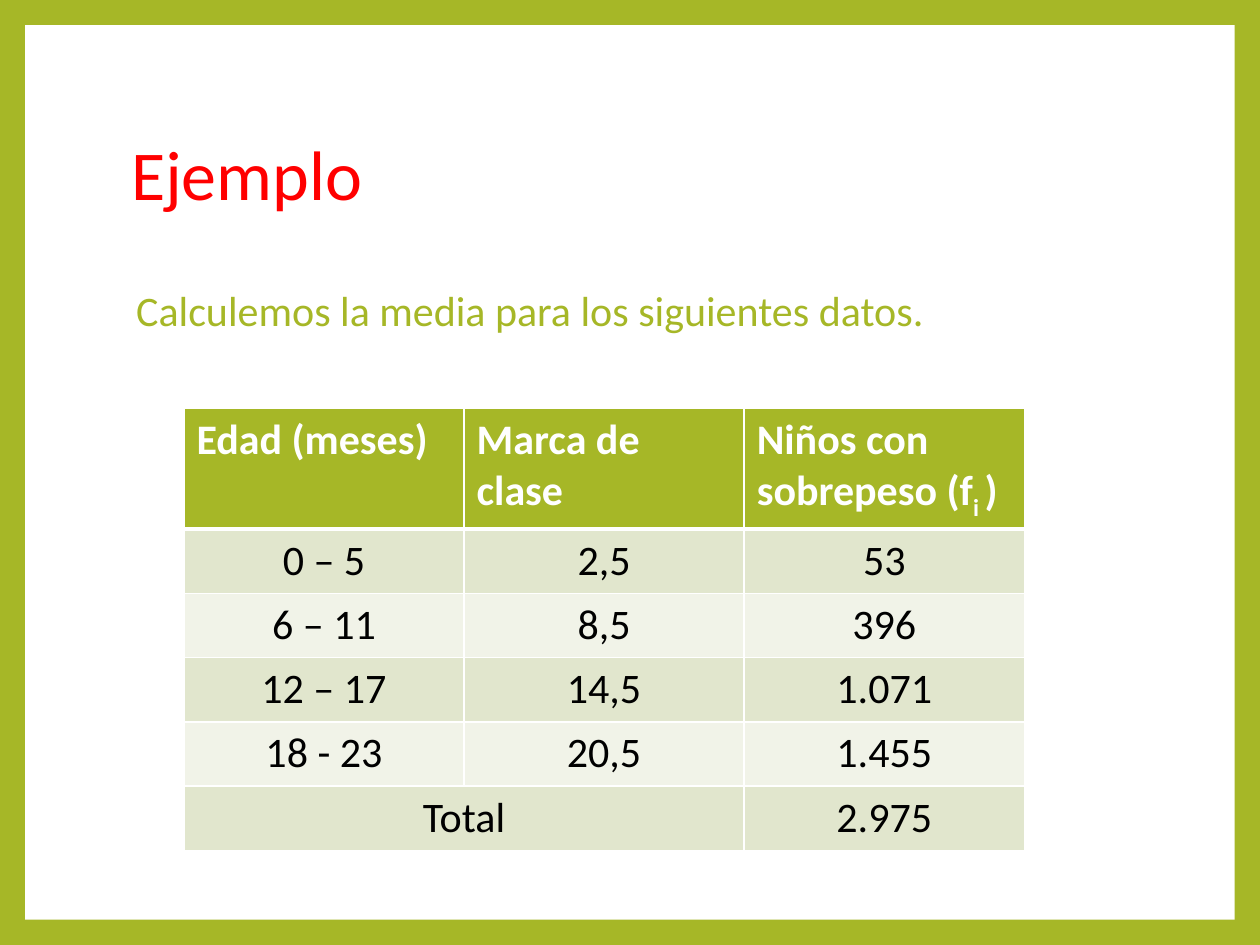
from lxml.etree import SubElement
from pptx import Presentation
from pptx.dml.color import RGBColor
from pptx.enum.shapes import MSO_SHAPE
from pptx.enum.text import MSO_ANCHOR, PP_ALIGN
from pptx.oxml.ns import qn
from pptx.util import Inches, Pt

COLORS = {name: RGBColor.from_string(value) for name, value in {
    "green": "A6B727", "white": "FFFFFF", "red": "FF0000", "black": "000000",
    "band_dark": "E1E6CD", "band_light": "F1F3E8"}.items()}


def add_run(paragraph, text, size, color, bold=False):
    run = paragraph.add_run()
    run.text = text
    run.font.name = "Calibri"
    run.font.size = Pt(size)
    run.font.bold = bold
    run.font.color.rgb = COLORS[color]
    return run


def add_borders(cell, bottom, top):
    """Draw white borders around a cell; bottom and top are widths in points."""
    properties = cell._tc.get_or_add_tcPr()
    for side, width in (("L", 1), ("R", 1), ("T", top), ("B", bottom)):
        line = SubElement(properties, qn(f"a:ln{side}"), w=str(Pt(width)))
        fill = SubElement(line, qn("a:solidFill"))
        SubElement(fill, qn("a:srgbClr"), val=str(COLORS["white"]))


prs = Presentation()
prs.slide_width, prs.slide_height = Inches(10), Inches(7.5)
slide = prs.slides.add_slide(prs.slide_layouts[1])
slide.background.fill.solid()
slide.background.fill.fore_color.rgb = COLORS["green"]
title, body = slide.placeholders

# White page inside the green frame, behind the placeholders
page = slide.shapes.add_shape(MSO_SHAPE.RECTANGLE, Inches(0.2), Inches(0.2),
                              Inches(9.6), Inches(7.1))
page.shadow.inherit = False
page.fill.solid()
page.fill.fore_color.rgb = COLORS["white"]
page.line.fill.background()
title.element.addprevious(page.element)

# Title and introduction
title.left, title.top = Inches(0.94), Inches(0.67)
title.width, title.height = Inches(8.1), Inches(1.48)
title.text_frame.vertical_anchor = MSO_ANCHOR.MIDDLE
heading = title.text_frame.paragraphs[0]
heading.alignment = PP_ALIGN.LEFT
heading.line_spacing = 0.9
add_run(heading, "Ejemplo", 40, "red")

body.left, body.top = Inches(0.94), Inches(2.25)
body.width, body.height = Inches(8.1), Inches(4.42)
intro = body.text_frame.paragraphs[0]
intro.line_spacing = 0.9
intro.space_before = Pt(10)
intro_properties = intro._p.get_or_add_pPr()
intro_properties.set("marL", str(Inches(0.04)))
intro_properties.set("indent", "0")
SubElement(intro_properties, qn("a:buNone"))
add_run(intro, "Calculemos la media para los siguientes datos.", 24, "green")

# Frequency table
HEADERS = [["Edad (meses)"], ["Marca de clase"], ["Niños con sobrepeso (f", "i ", ")"]]
AGE_GROUPS = [
    ["0 – 5", "2,5", "53"],
    ["6 – 11", "8,5", "396"],
    ["12 – 17", "14,5", "1.071"],
    ["18 - 23", "20,5", "1.455"],
    ["Total", "", "2.975"],
]
rows = [HEADERS] + [[[text] for text in group] for group in AGE_GROUPS]
frequencies = slide.shapes.add_table(len(rows), len(HEADERS), Inches(1.46), Inches(3.24),
                                     Inches(6.67), Inches(3.49)).table
for r, row in enumerate(rows):
    is_header = r == 0
    frequencies.rows[r].height = Inches(0.94 if is_header else 0.51)
    band = "green" if is_header else "band_dark" if r % 2 else "band_light"
    for c, parts in enumerate(row):
        cell = frequencies.cell(r, c)
        add_borders(cell, bottom=3 if is_header else 1, top=3 if r == 1 else 1)
        cell.fill.solid()
        cell.fill.fore_color.rgb = COLORS[band]
        paragraph = cell.text_frame.paragraphs[0]
        paragraph.alignment = PP_ALIGN.LEFT if is_header else PP_ALIGN.CENTER
        for text in filter(None, parts):
            run = add_run(paragraph, text, 24, "white" if is_header else "black", is_header)
            if text == "i ":
                run.font._element.set("baseline", "-25000")

total_row = len(rows) - 1
frequencies.cell(total_row, 0).merge(frequencies.cell(total_row, 1))

prs.save("out.pptx")
